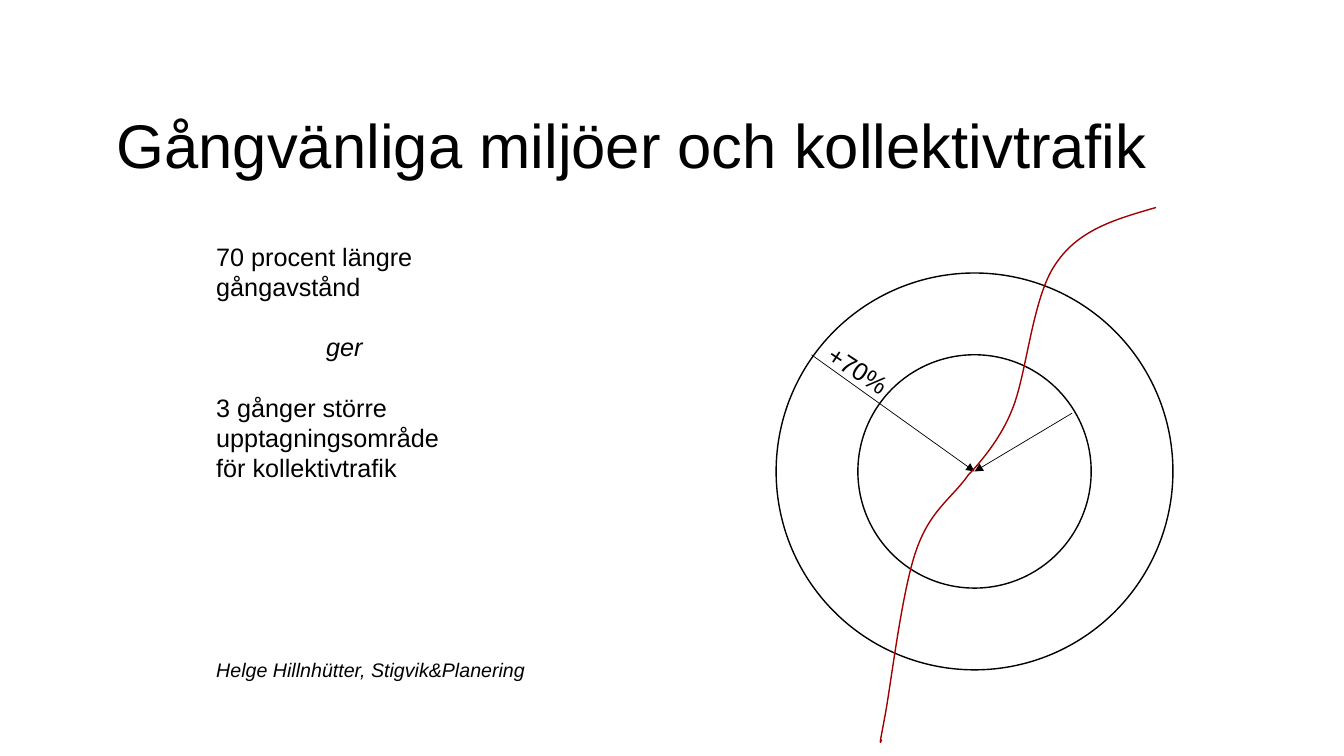
from lxml import etree
from pptx import Presentation
from pptx.dml import color
from pptx.enum import shapes, text
from pptx.oxml import ns
from pptx.util import Cm, Pt

BLACK = "000000"
RED = "9F0000"
ROUTE = [
    (29.13, 5.23), (28.17, 5.51), (27.2, 5.77), (26.62, 6.63),
    (26.01, 7.47), (25.88, 9.45), (25.5, 10.34),
    (25.15, 11.23), (24.41, 11.96), (24.41, 11.96),
    (24, 12.55), (23.44, 12.85), (23.09, 13.87),
    (22.73, 14.88), (22.45, 17.27), (22.3, 18.06),
    (22.15, 18.85), (22.17, 18.75), (22.22, 18.64),
]


def rgb(code):
    return color.RGBColor.from_string(code)


def ink(line, code, width):
    line.color.rgb = rgb(code)
    line.width = Pt(width)


def write(slide, box, lines, size, gap=0, turn=0, lead=1.0):
    shape = slide.shapes.add_textbox(*map(Cm, box))
    shape.rotation = turn
    frame = shape.text_frame
    frame.word_wrap = True
    frame.vertical_anchor = text.MSO_ANCHOR.TOP
    for i, (words, slant, align) in enumerate(lines):
        para = frame.paragraphs[0] if i == 0 else frame.add_paragraph()
        para.text = words
        para.alignment = align
        para.line_spacing = lead
        if i:
            para.space_before = Pt(gap)
        font = para.font
        font.name = "Arial"
        font.size = Pt(size)
        font.italic = slant
        font.color.rgb = rgb(BLACK)


def ring(slide, x, y, radius):
    shape = slide.shapes.add_shape(
        shapes.MSO_SHAPE.OVAL,
        Cm(x - radius), Cm(y - radius), Cm(2 * radius), Cm(2 * radius))
    shape.shadow.inherit = False
    shape.fill.background()
    ink(shape.line, BLACK, 1)


def arrow(slide, start, end):
    link = slide.shapes.add_connector(
        shapes.MSO_CONNECTOR.STRAIGHT, *map(Cm, start + end))
    ink(link.line, BLACK, 0.5)
    props = link._element.spPr
    etree.SubElement(props.find(ns.qn("a:ln")), ns.qn("a:tailEnd"), type="triangle")
    etree.SubElement(props, ns.qn("a:effectLst"))


def curve(slide, points):
    spots = [(Cm(x), Cm(y)) for x, y in points]
    form = slide.shapes.build_freeform(*spots[0])
    form.add_line_segments(spots[1:], close=False)
    shape = form.convert_to_shape()
    shape.shadow.inherit = False
    shape.fill.background()
    ink(shape.line, RED, 1)
    track = shape._element.spPr.find(".//" + ns.qn("a:path"))
    steps = track.findall(ns.qn("a:lnTo"))
    for i in range(0, len(steps), 3):
        bend = etree.SubElement(track, ns.qn("a:cubicBezTo"))
        for step in steps[i:i + 3]:
            bend.append(step[0])
            track.remove(step)


def main():
    deck = Presentation()
    deck.slide_width, deck.slide_height = Cm(33.87), Cm(19.05)
    slide = deck.slides.add_slide(deck.slide_layouts[6])
    left, mid = text.PP_ALIGN.LEFT, text.PP_ALIGN.CENTER
    hub = (24.56, 11.88)

    write(slide, (2.69, 2.77, 28.78, 2.87),
          [("Gångvänliga miljöer och kollektivtrafik", False, left)], 44, lead=0.9)
    for radius in (5, 2.94):
        ring(slide, *hub, radius)
    arrow(slide, (20.45, 8.94), hub)
    write(slide, (20.55, 8.84, 2.26, 1.02), [("+70%", False, left)], 18, turn=33.4)
    arrow(slide, (27.02, 10.41), hub)
    write(slide, (5.2, 5.95, 6.96, 6.4), [
        ("70 procent längre gångavstånd", False, left),
        ("ger", True, mid),
        ("3 gånger större upptagningsområde för kollektivtrafik", False, left),
    ], 18, gap=21.6)
    curve(slide, ROUTE)
    write(slide, (5.2, 16.46, 12.07, 0.86),
          [("Helge Hillnhütter, Stigvik&Planering", True, left)], 14)
    deck.save("out.pptx")


if __name__ == "__main__":
    main()
